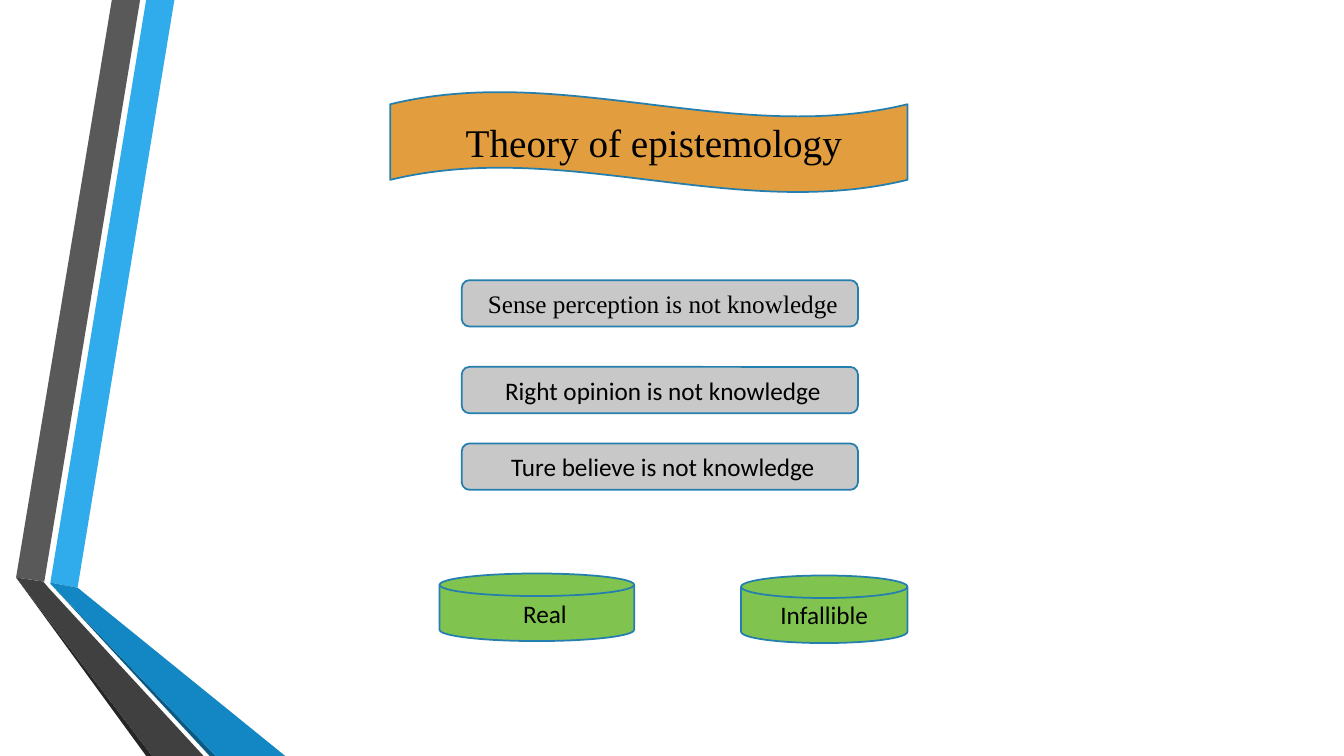
"""Build the slide on the theory of epistemology."""
from pptx import Presentation
from pptx.dml.color import RGBColor
from pptx.enum.shapes import MSO_SHAPE
from pptx.enum.text import MSO_ANCHOR, PP_ALIGN
from pptx.util import Inches, Pt


def paint(shape, fill, line=None):
    shape.shadow.inherit = False
    shape.fill.solid()
    shape.fill.fore_color.rgb = RGBColor.from_string(fill)
    if line:
        shape.line.color.rgb = RGBColor.from_string(line)
        shape.line.width = Pt(1.25)
    else:
        shape.line.fill.background()


def write(shape, text, font="Calibri", size=18, color="000000", inset=0.1):
    frame = shape.text_frame
    frame.word_wrap = True
    frame.vertical_anchor = MSO_ANCHOR.MIDDLE
    frame.margin_left = Inches(inset)
    frame.margin_right = Inches(0.1)
    frame.margin_top = frame.margin_bottom = Inches(0.05)
    para = frame.paragraphs[0]
    para.alignment = PP_ALIGN.CENTER
    run = para.add_run()
    run.text = text
    run.font.name = font
    run.font.size = Pt(size)
    run.font.color.rgb = RGBColor.from_string(color)


deck = Presentation()
deck.slide_width = Inches(13.33)
deck.slide_height = Inches(7.5)
slide = deck.slides.add_slide(deck.slide_layouts[5])
shapes = slide.shapes
title = shapes.title
edge = "247FAF"
serif = "Times New Roman"

bands = [
    ("30ACEC", [(0.5, 5.78), (0.77, 5.83), (1.73, 0), (1.45, 0)]),
    ("595959", [(1.39, 0), (1.11, 0), (0.16, 5.73), (0.44, 5.77)]),
    ("262626", [(0.16, 5.73), (1.45, 7.5), (1.51, 7.5)]),
    ("0C5A82", [(0.5, 5.79), (2.08, 7.5), (2.14, 7.5)]),
    ("1287C3", [(0.5, 5.79), (2.14, 7.5), (2.83, 7.5), (0.77, 5.83), (0.5, 5.78)]),
    ("404040", [(2.02, 7.5), (0.48, 5.83), (0.43, 5.77), (0.16, 5.73), (1.51, 7.5)]),
]
for fill, points in bands:
    start, *rest = [(Inches(x), Inches(y)) for x, y in points]
    pen = shapes.build_freeform(*start)
    pen.add_line_segments(rest, close=True)
    paint(pen.convert_to_shape(), fill)

place = [Inches(n) for n in (3.87, 0.91, 5.13, 1)]
wave = shapes.add_shape(MSO_SHAPE.WAVE, *place)
paint(wave, "E29D3E", edge)
title.left, title.top, title.width, title.height = place
write(title, "Theory of epistemology", font=serif, size=28, inset=0.2)
shapes._spTree.append(title._element)

claims = [
    (2.78, "Sense perception is not knowledge", serif),
    (3.64, "Right opinion is not knowledge", "Calibri"),
    (4.4, "Ture believe is not knowledge", "Calibri"),
]
for top, text, font in claims:
    box = shapes.add_shape(MSO_SHAPE.ROUNDED_RECTANGLE, Inches(4.58), Inches(top),
                           Inches(3.93), Inches(0.46))
    paint(box, "C8C8C8", edge)
    write(box, text, font=font, inset=0.16)

traits = [
    (4.36, 5.69, 1.93, "Real", 0.26),
    (7.35, 5.71, 1.65, "Infallible", 0.1),
]
for left, top, width, text, inset in traits:
    disk = shapes.add_shape(MSO_SHAPE.FLOWCHART_MAGNETIC_DISK, Inches(left), Inches(top),
                            Inches(width), Inches(0.67))
    paint(disk, "80C34F", edge)
    write(disk, text, inset=inset)

deck.save("out.pptx")
